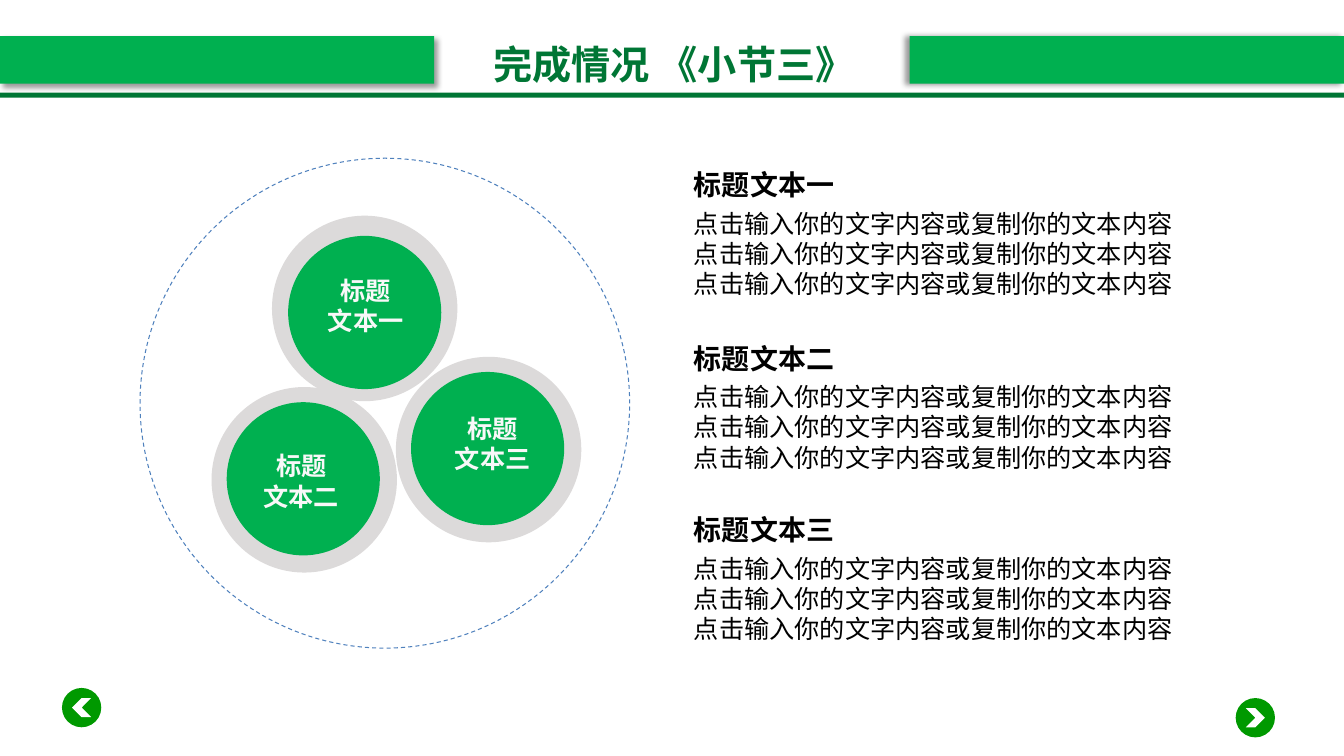
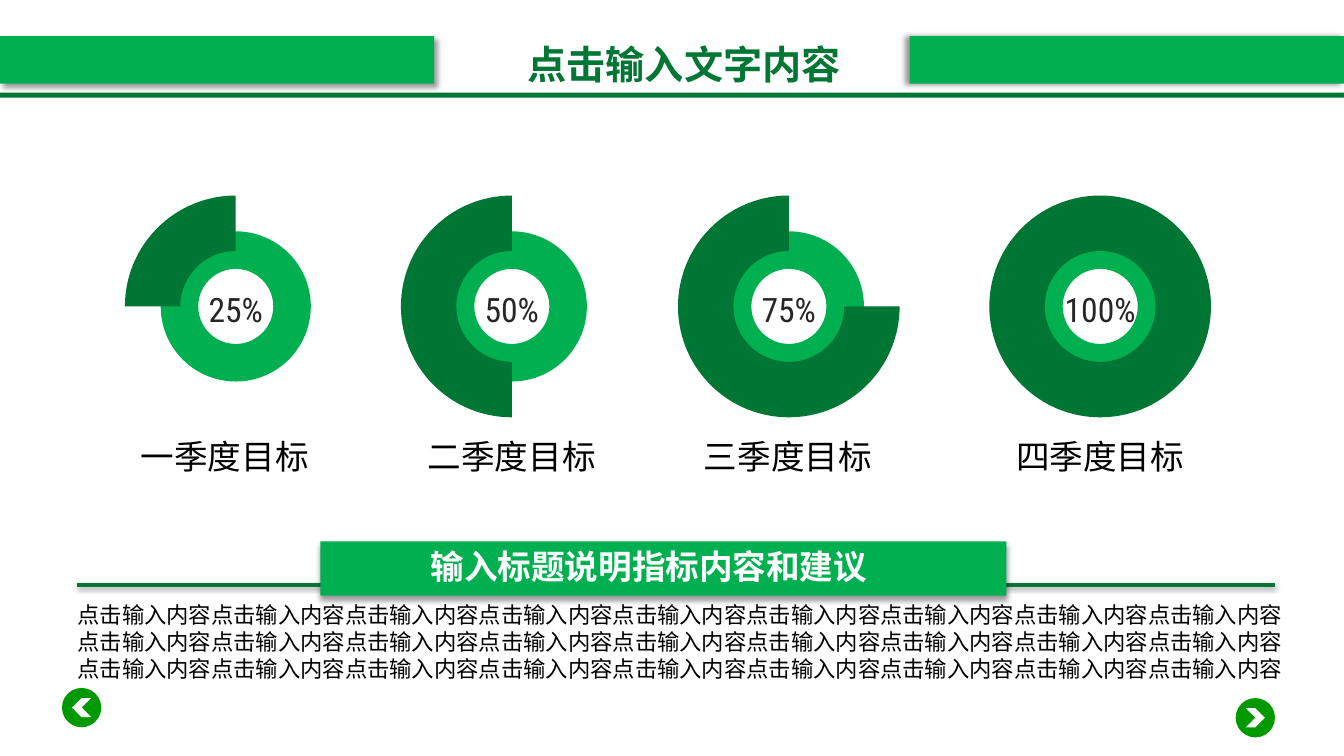
from lxml.etree import SubElement
from pptx import Presentation
from pptx.dml.color import RGBColor
from pptx.enum.dml import MSO_LINE
from pptx.enum.shapes import MSO_CONNECTOR, MSO_SHAPE
from pptx.enum.text import MSO_ANCHOR, MSO_AUTO_SIZE, PP_ALIGN
from pptx.oxml.ns import qn
from pptx.util import Inches, Pt

CJK, LATIN = "Noto Sans CJK SC", "Roboto Condensed"
GREEN, DARK, NAV = "00B050", "007635", "009900"
GREY, BLUE, WHITE, PALE = "DCDADA", "4F81BD", "FFFFFF", "F8F8F8"
BLACK, INK = "000000", "262626"
WIDTH = 13.34

# title, centre of title
TITLES = [("完成情况 《小节三》", 6.69), ("点击输入文字内容", 6.79)]

# label lines, grey centre, green centre, text centre
BALLS = [
    (["标题", "文本二"], (3.02, 4.76), (3.01, 4.75), (2.99, 4.77)),
    (["标题", "文本三"], (4.85, 4.46), (4.84, 4.45), (4.89, 4.4)),
    (["标题", "文本一"], (3.62, 3.06), (3.62, 3.1), (3.63, 3.03)),
]
# heading, top
TOPICS = [("标题文本一", 1.61), ("标题文本二", 3.33), ("标题文本三", 5.03)]
DETAIL = ["点击输入你的文字内容或复制你的文本内容"] * 3

# percent, label, ring centre, label centre
GOALS = [
    (25, "一季度目标", 2.34, 2.23),
    (50, "二季度目标", 5.08, 5.08),
    (75, "三季度目标", 7.83, 7.82),
    (100, "四季度目标", 10.92, 10.92),
]
RING_Y = 3.04
ADVICE = "输入标题说明指标内容和建议"
NOTES = ["点击输入内容" * 9] * 3


def rgb(color):
    return RGBColor.from_string(color)


def box(left, top, width, height):
    return [Inches(n) for n in (left, top, width, height)]


def around(x, y, width, height):
    """Box centred on a point."""
    return box(x - width / 2, y - height / 2, width, height)


def cast(shape, alpha, blur, dist, angle):
    """Give a shape or connector an outer shadow."""
    props = shape.element.find(qn("p:spPr"))
    effects = props.find(qn("a:effectLst"))
    if effects is None:
        effects = SubElement(props, qn("a:effectLst"))
    outer = SubElement(effects, qn("a:outerShdw"), blurRad=str(Pt(blur)),
                       dist=str(Pt(dist)), dir=str(angle * 60000),
                       algn="tl", rotWithShape="0")
    tint = SubElement(outer, qn("a:srgbClr"), val=BLACK)
    SubElement(tint, qn("a:alpha"), val=str(alpha * 1000))


def draw(shapes, kind, place, fill=None):
    shape = shapes.add_shape(kind, *place)
    shape.shadow.inherit = False
    shape.line.fill.background()
    if fill:
        shape.fill.solid()
        shape.fill.fore_color.rgb = rgb(fill)
    else:
        shape.fill.background()
    return shape


def write(shape, lines, size, color, bold=False, align=PP_ALIGN.CENTER,
          face=CJK):
    frame = shape.text_frame
    frame.word_wrap = True
    frame.auto_size = MSO_AUTO_SIZE.NONE
    frame.vertical_anchor = MSO_ANCHOR.MIDDLE
    frame.text = "\n".join(lines)
    for para in frame.paragraphs:
        para.alignment = align
        if len(lines) > 1:
            para.line_spacing = Pt(size * 1.2)
        font = para.font
        font.name, font.size, font.bold = face, Pt(size), bold
        font.color.rgb = rgb(color)
    for props in shape.element.iter(qn("a:defRPr")):
        SubElement(props, qn("a:ea"), typeface=face)


def label(slide, place, lines, *style, **more):
    write(slide.shapes.add_textbox(*place), lines, *style, **more)


def brand(layout, slide):
    """Draw bands and buttons on a slide, then move them to its layout."""
    for shape in list(layout.placeholders)[1:]:
        layout.shapes.element.remove(shape.element)
    parts = []
    for left, angle in ((0, 45), (WIDTH - 4.31, 180)):
        band = draw(slide.shapes, MSO_SHAPE.RECTANGLE,
                    box(left, 0.36, 4.31, 0.47), GREEN)
        cast(band, 40, 4, 3, angle)
        parts.append(band)
    parts.append(draw(slide.shapes, MSO_SHAPE.RECTANGLE,
                      box(0, 0.92, WIDTH, 0.05), DARK))
    for x, y, turn in ((0.81, 7.02, 180), (12.46, 7.12, 0)):
        group = slide.shapes.add_group_shape()
        draw(group.shapes, MSO_SHAPE.OVAL, around(x, y, 0.39, 0.39), NAV)
        arrow = draw(group.shapes, MSO_SHAPE.CHEVRON,
                     around(x, y, 0.19, 0.19), WHITE)
        arrow.rotation = turn
        parts.append(group)
    for part in parts:
        layout.shapes.element.append(part.element)


def head(slide, text, x):
    title = slide.shapes.title
    title.left, title.top, title.width, title.height = around(
        x, 0.635, 4.2, 0.57)
    write(title, [text], 28, DARK, True)


def topics(slide):
    orbit = draw(slide.shapes, MSO_SHAPE.OVAL, box(1.39, 1.57, 4.86, 4.86))
    orbit.line.color.rgb = rgb(BLUE)
    orbit.line.width = Pt(0.75)
    orbit.line.dash_style = MSO_LINE.DASH
    for _, rim, core, _ in BALLS:
        for spot, size, fill in ((rim, 1.84, GREY), (core, 1.52, GREEN)):
            draw(slide.shapes, MSO_SHAPE.OVAL, around(*spot, size, size), fill)
    for lines, _, _, spot in BALLS:
        label(slide, around(*spot, 1.01, 0.71), lines, 18, PALE, True)
    for text, top in TOPICS:
        label(slide, box(6.79, top, 5.36, 0.44), [text], 20, BLACK, True,
              PP_ALIGN.LEFT)
        label(slide, box(6.79, top + 0.4, 5.36, 1.01), DETAIL, 18, BLACK,
              align=PP_ALIGN.LEFT)


def goals(slide):
    for share, name, x, mid in GOALS:
        ring = draw(slide.shapes, MSO_SHAPE.DONUT,
                    around(x, RING_Y, 1.49, 1.49), GREEN)
        ring.adjustments[0] = 0.25
        place = around(x, RING_Y, 2.2, 2.2)
        if share == 100:
            arc = draw(slide.shapes, MSO_SHAPE.DONUT, place, DARK)
            arc.adjustments[0] = 0.25
        else:
            arc = draw(slide.shapes, MSO_SHAPE.BLOCK_ARC, place, DARK)
            # angles are stored in units of 100000 / 60000 degrees
            arc.adjustments[0] = (270 - 3.6 * share) * 0.6
            arc.adjustments[1] = 270 * 0.6
            arc.adjustments[2] = 0.25
        label(slide, around(x, 3.07, 1.2, 0.5), [f"{share}%"], 24, INK,
              face=LATIN)
        label(slide, around(mid, 4.52, 2.2, 0.5), [name], 24, BLACK)


def advice(slide):
    label(slide, box(0.67, 5.91, 12.22, 0.91), NOTES, 16, BLACK,
          align=PP_ALIGN.LEFT)
    rule = slide.shapes.add_connector(
        MSO_CONNECTOR.STRAIGHT, Inches(0.76), Inches(5.8),
        Inches(12.66), Inches(5.8))
    rule.line.color.rgb = rgb(DARK)
    rule.line.width = Pt(3)
    cast(rule, 35, 3.1, 1.8, 90)
    banner = draw(slide.shapes, MSO_SHAPE.RECTANGLE,
                  box(3.18, 5.37, 6.81, 0.54), GREEN)
    cast(banner, 40, 4, 3, 90)
    label(slide, box(4.04, 5.37, 4.8, 0.5), [ADVICE], 24, WHITE, True)


def main():
    deck = Presentation()
    deck.slide_width, deck.slide_height = Inches(WIDTH), Inches(7.5)
    layout = deck.slide_layouts[5]
    first, second = [deck.slides.add_slide(layout) for _ in TITLES]
    brand(layout, first)
    for slide, (text, x) in zip((first, second), TITLES):
        head(slide, text, x)
    topics(first)
    goals(second)
    advice(second)
    deck.save("out.pptx")


if __name__ == "__main__":
    main()
